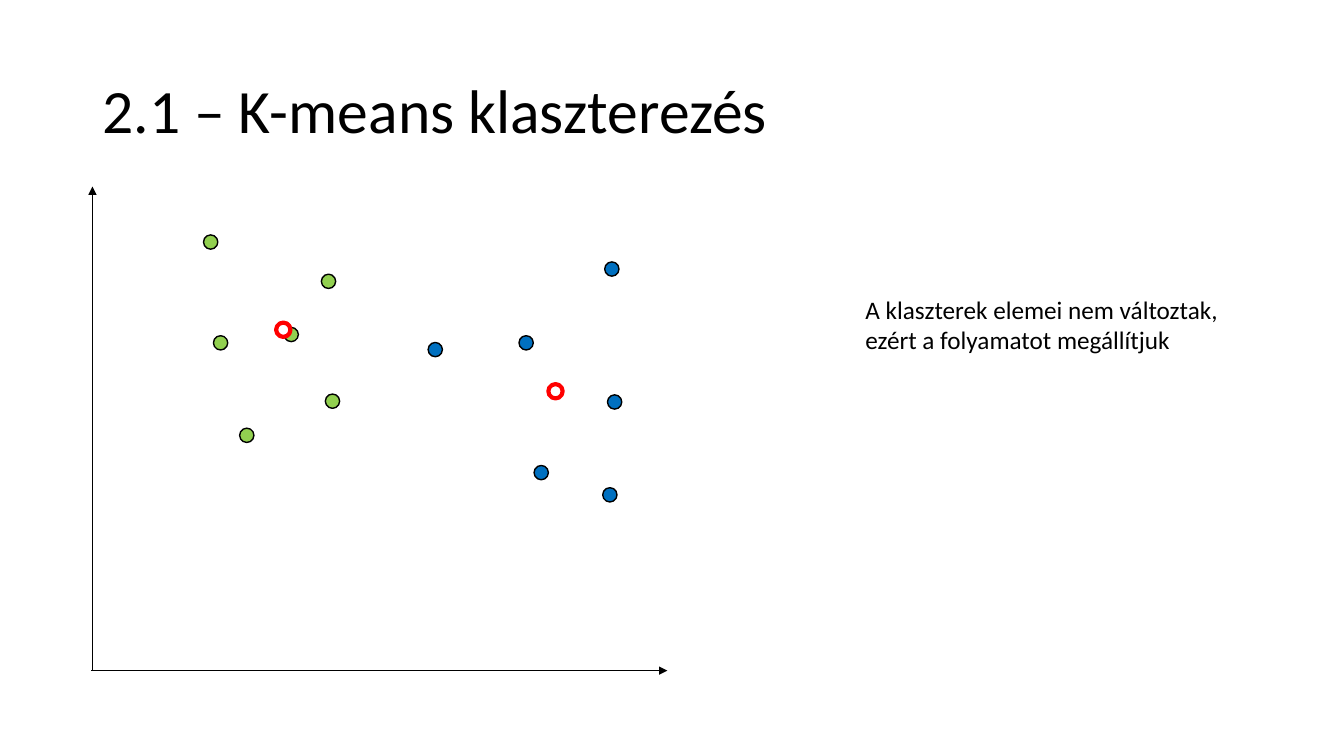
from pptx import Presentation
from pptx.dml.color import RGBColor
from pptx.enum.shapes import MSO_CONNECTOR, MSO_SHAPE
from pptx.enum.text import MSO_ANCHOR, MSO_AUTO_SIZE, PP_ALIGN
from pptx.oxml.ns import qn
from pptx.util import Cm, Pt
from lxml import etree

STRAIGHT = MSO_CONNECTOR.STRAIGHT
OVAL = MSO_SHAPE.OVAL
MIDDLE = MSO_ANCHOR.MIDDLE
LEFT = PP_ALIGN.LEFT
NO_FIT = MSO_AUTO_SIZE.NONE
GROW = MSO_AUTO_SIZE.SHAPE_TO_FIT_TEXT

COLORS = {
    "ink": "000000",
    "paper": "FFFFFF",
    "green": "92D050",
    "blue": "0070C0",
    "centroid": "FF0000",
}
CLUSTERS = {
    "green": [(8.28, 7.09), (5.56, 8.64), (8.38, 10.11),
              (7.34, 8.43), (5.31, 6.1), (6.22, 10.97)],
    "blue": [(15.37, 12.47), (13.26, 8.64), (15.49, 10.13),
             (13.64, 11.91), (15.42, 6.78), (10.97, 8.81)],
}
CENTROIDS = [(7.14, 8.31), (14, 9.86)]


class ClusterSlide:
    """Draws the elements of the clustering slide in one style."""

    font = "Calibri"
    diameter = 0.36

    def __init__(self, deck):
        self.slide = deck.slides.add_slide(deck.slide_layouts[5])
        self.shapes = self.slide.shapes

    def color(self, name):
        return RGBColor.from_string(COLORS[name])

    def format_text(self, frame, size):
        for para in frame.paragraphs:
            para.alignment = LEFT
            for span in para.runs:
                span.font.name = self.font
                span.font.size = Pt(size)
                span.font.color.rgb = self.color("ink")

    def title(self, text, left, top, width, height):
        box = self.shapes.title
        box.left, box.top = Cm(left), Cm(top)
        box.width, box.height = Cm(width), Cm(height)
        frame = box.text_frame
        frame.text = text
        frame.auto_size = NO_FIT
        frame.vertical_anchor = MIDDLE
        frame.paragraphs[0].line_spacing = 0.9
        self.format_text(frame, 44)

    def note(self, text, left, top, width, height):
        box = self.shapes.add_textbox(Cm(left), Cm(top), Cm(width), Cm(height))
        frame = box.text_frame
        frame.word_wrap = False
        frame.auto_size = GROW
        frame.paragraphs[0].text = text
        self.format_text(frame, 18)

    def axis(self, start, end):
        arrow = self.shapes.add_connector(STRAIGHT, *map(Cm, start + end))
        arrow.line.color.rgb = self.color("ink")
        arrow.line.width = Pt(0.5)
        outline = arrow.line._get_or_add_ln()
        etree.SubElement(outline, qn("a:tailEnd"), type="triangle")
        etree.SubElement(arrow._element.spPr, qn("a:effectLst"))

    def dot(self, center, fill, line="ink", weight=1):
        left, top = (Cm(value - self.diameter / 2) for value in center)
        size = Cm(self.diameter)
        circle = self.shapes.add_shape(OVAL, left, top, size, size)
        circle.shadow.inherit = False
        circle.fill.solid()
        circle.fill.fore_color.rgb = self.color(fill)
        circle.line.color.rgb = self.color(line)
        circle.line.width = Pt(weight)


def main():
    deck = Presentation()
    deck.slide_width, deck.slide_height = Cm(33.87), Cm(19.05)
    page = ClusterSlide(deck)
    page.title("2.1 – K-means klaszterezés", 2.33, 1.02, 29.21, 3.68)
    page.axis((2.33, 16.9), (2.33, 4.7))
    page.axis((2.3, 16.9), (16.82, 16.9))
    for fill, centers in CLUSTERS.items():
        for center in centers:
            page.dot(center, fill)
    page.note("A klaszterek elemei nem változtak,\vezért a folyamatot megállítjuk",
              21.56, 7.29, 9.5, 1.8)
    for center in CENTROIDS:
        page.dot(center, "paper", "centroid", 3)
    deck.save("out.pptx")


if __name__ == "__main__":
    main()
